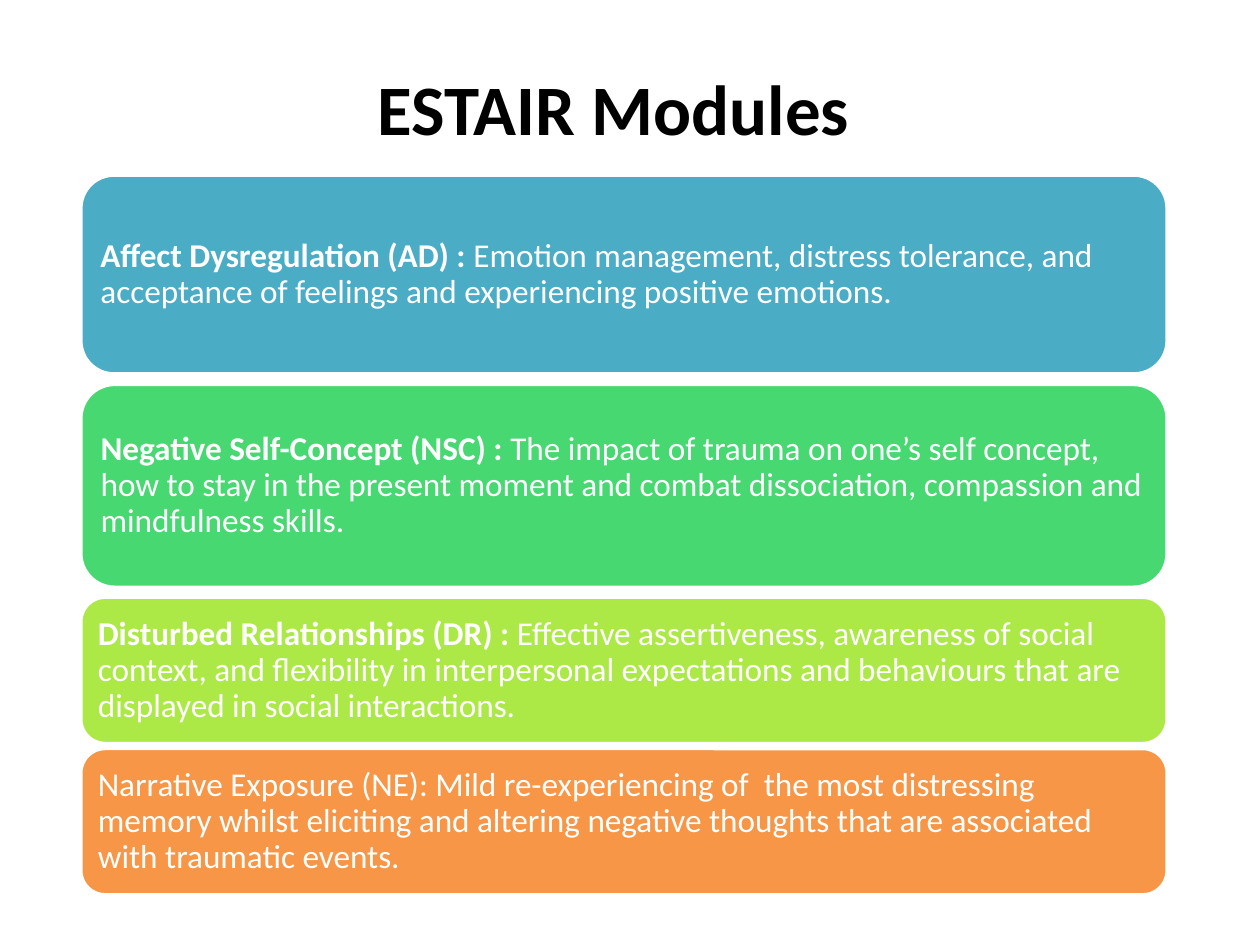
from typing import NamedTuple

from pptx import Presentation
from pptx.dml.color import RGBColor
from pptx.enum.shapes import MSO_SHAPE
from pptx.enum.text import MSO_ANCHOR, PP_ALIGN
from pptx.util import Cm, Pt

FONT = "Calibri"
WHITE = RGBColor(0xFF, 0xFF, 0xFF)
BLACK = RGBColor(0x00, 0x00, 0x00)
TEAL = RGBColor(0x4B, 0xAC, 0xC6)
GREEN = RGBColor(0x47, 0xD8, 0x72)
LIME = RGBColor(0xAC, 0xE9, 0x46)
ORANGE = RGBColor(0xF7, 0x96, 0x46)

PANEL_LEFT, PANEL_WIDTH = Cm(1.63), Cm(21.9)
PANEL_INSET = Cm(0.2)


class Module(NamedTuple):
    top: float
    height: float
    fill: RGBColor
    name: str
    description: str


MODULES = [
    Module(3.53, 4.01, TEAL, "Affect Dysregulation (AD) : ",
           "Emotion management, distress tolerance, and acceptance of feelings "
           "and experiencing positive emotions."),
    Module(7.75, 4.09, GREEN, "Negative Self-Concept (NSC) : ",
           "The impact of trauma on one’s self concept, how to stay in the present "
           "moment and combat dissociation, compassion and mindfulness skills."),
    Module(12.04, 2.95, LIME, "Disturbed Relationships (DR) : ",
           "Effective assertiveness, awareness of social context, and flexibility in "
           "interpersonal expectations and behaviours that are displayed in social "
           "interactions."),
    Module(15.09, 2.95, ORANGE, "",
           "Narrative Exposure (NE): Mild re-experiencing of  the most distressing "
           "memory whilst eliciting and altering negative thoughts that are "
           "associated with traumatic events."),
]


def add_span(para, text: str, size: float, color: RGBColor, bold: bool) -> None:
    span = para.add_run()
    span.text = text
    span.font.name = FONT
    span.font.size = Pt(size)
    span.font.bold = bold
    span.font.color.rgb = color


def set_frame(frame, anchor: MSO_ANCHOR, side: int, end: int) -> None:
    frame.word_wrap = True
    frame.vertical_anchor = anchor
    frame.margin_left = frame.margin_right = side
    frame.margin_top = frame.margin_bottom = end


def add_title(page, text: str) -> None:
    box = page.shapes.add_textbox(Cm(0.89), Cm(0.91), Cm(22.96), Cm(2.21))
    set_frame(box.text_frame, MSO_ANCHOR.BOTTOM, Cm(0.19), Cm(0.1))
    para = box.text_frame.paragraphs[0]
    para.alignment = PP_ALIGN.CENTER
    add_span(para, text, 40.5, BLACK, True)


def add_module(page, module: Module) -> None:
    panel = page.shapes.add_shape(
        MSO_SHAPE.ROUNDED_RECTANGLE, PANEL_LEFT, Cm(module.top),
        PANEL_WIDTH, Cm(module.height))
    panel.shadow.inherit = False
    panel.fill.solid()
    panel.fill.fore_color.rgb = module.fill
    panel.line.color.rgb = WHITE
    panel.line.width = Pt(2)

    set_frame(panel.text_frame, MSO_ANCHOR.MIDDLE, PANEL_INSET, PANEL_INSET)
    para = panel.text_frame.paragraphs[0]
    para.alignment = PP_ALIGN.LEFT
    para.line_spacing = 0.9
    if module.name:
        add_span(para, module.name, 19, WHITE, True)
    add_span(para, module.description, 19, WHITE, False)


def main() -> None:
    deck = Presentation()
    deck.slide_width, deck.slide_height = Cm(25.4), Cm(19.05)
    page = deck.slides.add_slide(deck.slide_layouts[6])

    # Module panels
    for module in MODULES:
        add_module(page, module)

    # Title
    add_title(page, "ESTAIR Modules")

    deck.save("out.pptx")


if __name__ == "__main__":
    main()
